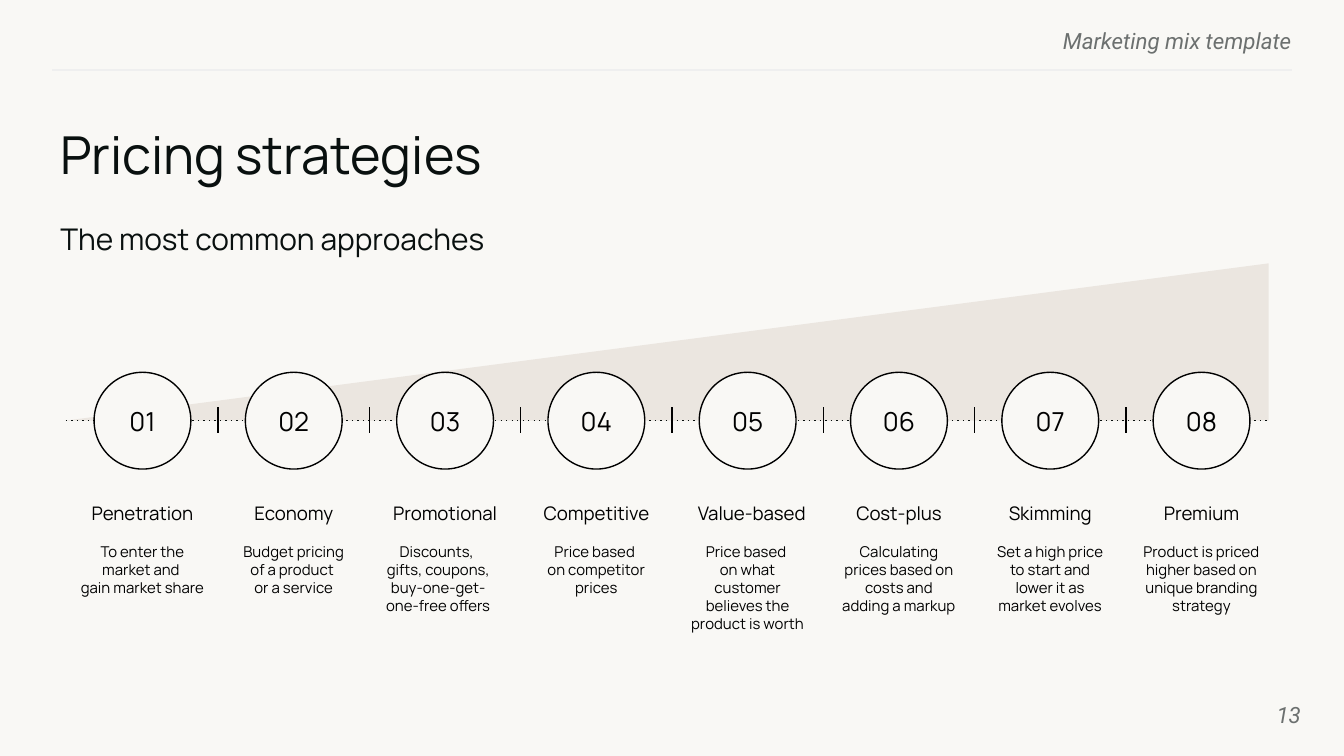
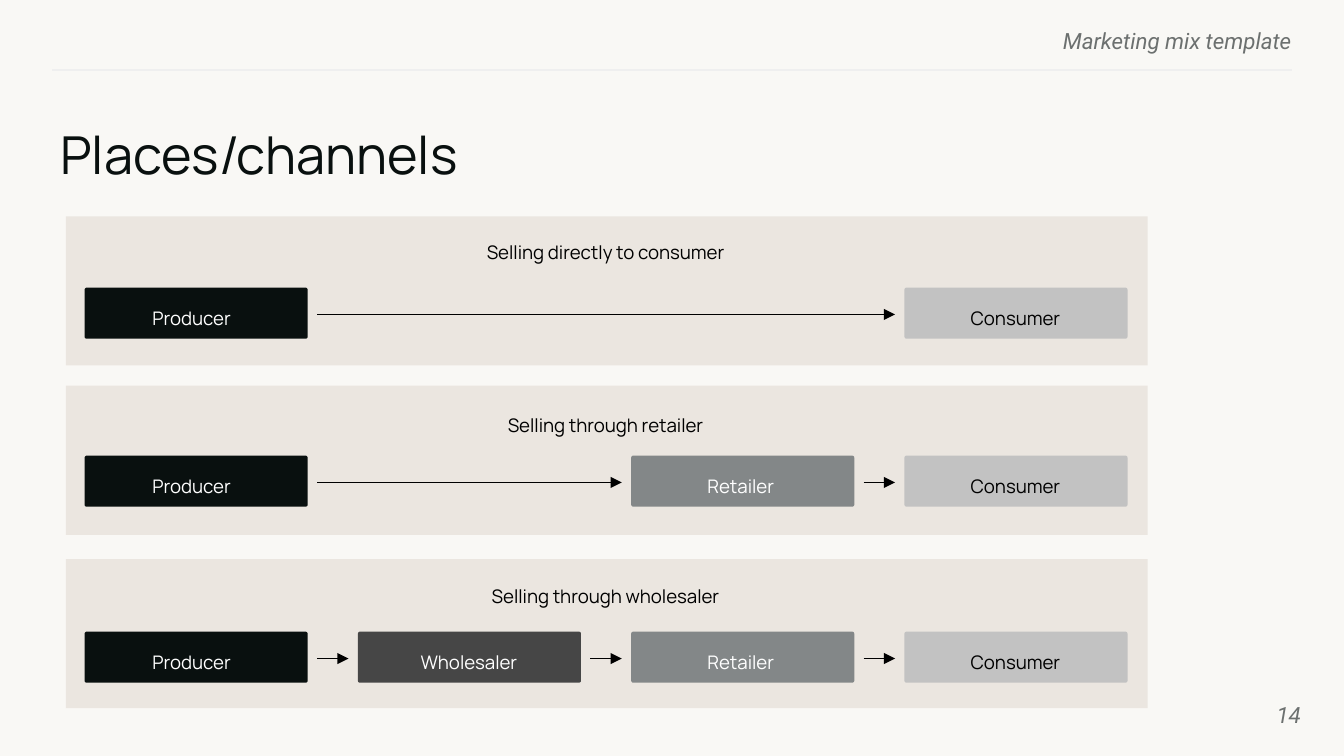
from copy import deepcopy

from lxml import etree
from pptx import Presentation
from pptx.dml.color import RGBColor
from pptx.enum.shapes import MSO_CONNECTOR, MSO_SHAPE
from pptx.enum.text import MSO_ANCHOR, MSO_AUTO_SIZE, PP_ALIGN
from pptx.oxml.ns import qn
from pptx.util import Inches, Pt

# Content
HEADER = "Marketing mix template"
PRICING = {
    "title": "Pricing strategies",
    "subtitle": "The most common approaches",
    "page": "13",
    # name, name width, name shift, description, description width, description shift
    "strategies": [
        ("Penetration", 1.25, 0, "To enter the market and \ngain market share", 1.21, 0),
        ("Economy", 0.99, 0, "Budget pricing of a product \nor a service", 1.12, 0),
        ("Promotional", 1.26, 0,
         "Discounts, \ngifts, coupons, buy-one-get-one-free offers", 1.13, -0.05),
        ("Competitive", 1.25, 0, "Price based \non competitor prices", 1.13, 0),
        ("Value-based", 1.21, 0.03,
         "Price based \non what customer believes the product is worth", 1.13, 0),
        ("Cost-plus", 0.99, 0,
         "Calculating prices based on costs and adding a markup", 1.12, 0),
        ("Skimming", 0.99, 0,
         "Set a high price to start and lower it as market evolves", 1.06, 0),
        ("Premium", 1.34, 0,
         "Product is priced higher based on unique branding strategy", 1.25, 0),
    ],
}
CHANNELS = {
    "title": "Places/channels",
    "page": "14",
    # caption, panel top, caption top, box top, members
    "panels": [
        ("Selling directly to consumer", 1.61, 1.68, 2.14, ["Producer", "Consumer"]),
        ("Selling through retailer", 2.87, 2.97, 3.39,
         ["Producer", "Retailer", "Consumer"]),
        ("Selling through wholesaler", 4.16, 4.24, 4.7,
         ["Producer", "Wholesaler", "Retailer", "Consumer"]),
    ],
}
# member: column, fill, text colour, label inset
MEMBERS = {
    "Producer": (0, "ink", "white", 0.1),
    "Wholesaler": (1, "dark_grey", "white", 0.13),
    "Retailer": (2, "mid_grey", "white", 0.12),
    "Consumer": (3, "light_grey", "black", 0.13),
}

# Shared look
COLORS = {
    "background": "F9F8F5", "ink": "09100F", "black": "000000", "white": "FFFFFF",
    "muted": "6C706F", "rule": "EFEFEF", "sand": "EBE6E0",
    "dark_grey": "464646", "mid_grey": "838788", "light_grey": "C2C2C2",
}
FONTS = {
    "title": {"name": "Manrope", "size": Pt(28)},
    "subtitle": {"name": "Manrope", "size": Pt(16)},
    "number": {"name": "Manrope", "size": Pt(14)},
    "label": {"name": "Manrope", "size": Pt(10)},
    "description": {"name": "Manrope", "size": Pt(8)},
    "page": {"name": "Roboto", "size": Pt(12), "italic": True},
}
NO_MARGINS = (0, 0, 0, 0)
LABEL_MARGINS = (0.13, 0.07, 0.13, 0.07)
CIRCLE_MARGINS = (0.1, 0.1, 0.1, 0.1)
CENTERED = {"alignment": PP_ALIGN.CENTER}
RIGHT = {"alignment": PP_ALIGN.RIGHT}
LABEL = {"alignment": PP_ALIGN.CENTER, "line_spacing": 1.25}


def color(name):
    return RGBColor.from_string(COLORS[name])


def apply(target, values):
    for name, value in values.items():
        setattr(target, name, value)


def write(shape, text, font, ink, margins=NO_MARGINS, paragraph_format=None, **frame_format):
    frame = shape.text_frame
    sides = ("margin_left", "margin_top", "margin_right", "margin_bottom")
    apply(frame, dict(zip(sides, map(Inches, margins))))
    apply(frame, {"word_wrap": True, **frame_format})
    paragraph = frame.paragraphs[0]
    paragraph.text = text
    apply(paragraph, paragraph_format or {})
    for run in paragraph.runs:
        apply(run.font, FONTS[font])
        run.font.color.rgb = color(ink)
    # Line breaks take the size of the text around them
    for line_break in paragraph._p.findall(qn("a:br")):
        line_break.insert(0, deepcopy(paragraph.runs[0]._r.find(qn("a:rPr"))))


def add_text(slide, box, *text_settings, **frame_format):
    textbox = slide.shapes.add_textbox(*map(Inches, box))
    write(textbox, *text_settings, **frame_format)


def add_label(slide, box, text, font="label", ink="black", paragraph_format=LABEL):
    add_text(slide, box, text, font, ink, LABEL_MARGINS, paragraph_format,
             auto_size=MSO_AUTO_SIZE.SHAPE_TO_FIT_TEXT)


def add_figure(slide, kind, box, fill, outline=None):
    shape = slide.shapes.add_shape(kind, *map(Inches, box))
    shape.shadow.inherit = False
    shape.fill.solid()
    shape.fill.fore_color.rgb = color(fill)
    if outline:
        shape.line.color.rgb = color(outline)
        shape.line.width = Pt(0.75)
    else:
        shape.line.fill.background()
    return shape


def add_line(slide, start, end, ink="black", dash=None, arrow=False):
    line = slide.shapes.add_connector(
        MSO_CONNECTOR.STRAIGHT, *map(Inches, (*start, *end)))
    line.line.color.rgb = color(ink)
    line.line.width = Pt(0.75)
    properties = line._element.spPr
    outline = properties.find(qn("a:ln"))
    if dash:
        etree.SubElement(outline, qn("a:prstDash"), val=dash)
    if arrow:
        etree.SubElement(outline, qn("a:tailEnd"), type="triangle")
    etree.SubElement(properties, qn("a:effectLst"))


def add_base_slide(presentation, content):
    slide = presentation.slides.add_slide(presentation.slide_layouts[6])
    slide.background.fill.solid()
    slide.background.fill.fore_color.rgb = color("background")
    add_text(slide, (5.76, 0.2, 3.85, 0.18), HEADER, "page", "muted", NO_MARGINS, RIGHT)
    add_line(slide, (9.61, 0.52), (0.39, 0.52), "rule")
    add_text(slide, (0.45, 0.91, 9.23, 0.51), content["title"], "title", "ink",
             NO_MARGINS, {"space_after": Pt(10)})
    add_text(slide, (9.08, 5.1, 0.6, 0.43), content["page"], "page", "muted",
             NO_MARGINS, RIGHT, vertical_anchor=MSO_ANCHOR.MIDDLE)
    return slide


def build_pricing(presentation):
    slide = add_base_slide(presentation, PRICING)
    add_text(slide, (0.45, 1.6, 5.54, 0.25), PRICING["subtitle"], "subtitle", "ink",
             NO_MARGINS, {"line_spacing": 1.15})

    # Rising wedge and dotted axis
    left, right, axis = 0.49, 9.44, 3.13
    wedge = add_figure(slide, MSO_SHAPE.RIGHT_TRIANGLE,
                       (left, 1.96, right - left, axis - 1.96), "sand")
    wedge._element.spPr.find(qn("a:xfrm")).set("flipH", "1")
    add_line(slide, (left, axis), (right, axis), "ink", dash="dot")

    # Numbered strategies with ticks between them
    strategies = PRICING["strategies"]
    first_center, last_center, diameter = 1.06, 8.94, 0.72
    pitch = (last_center - first_center) / (len(strategies) - 1)
    for index, strategy in enumerate(strategies):
        name, name_width, name_shift, description, width, shift = strategy
        center = first_center + index * pitch
        circle = add_figure(
            slide, MSO_SHAPE.OVAL,
            (center - diameter / 2, axis - diameter / 2, diameter, diameter),
            "background", "black")
        write(circle, f"{index + 1:02}", "number", "black", CIRCLE_MARGINS, CENTERED,
              vertical_anchor=MSO_ANCHOR.MIDDLE)
        add_label(slide, (center + name_shift - name_width / 2, 3.62, name_width, 0.3), name)
        add_label(slide, (center + shift - width / 2, 3.97, width, 0.67), description,
                  "description", paragraph_format=CENTERED)
        if index < len(strategies) - 1:
            tick = center + pitch / 2
            add_line(slide, (tick, 3.03), (tick, 3.22))


def build_channels(presentation):
    slide = add_base_slide(presentation, CHANNELS)
    first_left, last_left, box_width, box_height = 0.63, 6.73, 1.66, 0.38
    pitch = (last_left - first_left) / (len(MEMBERS) - 1)
    arrow_gap = 0.07
    for caption, panel_top, caption_top, box_top, members in CHANNELS["panels"]:
        add_figure(slide, MSO_SHAPE.RECTANGLE, (0.49, panel_top, 8.05, 1.11), "sand")
        add_label(slide, (2.68, caption_top, 3.65, 0.3), caption)

        # Members of the channel, each joined to the one before
        arrow_start = None
        for member in members:
            column, fill, ink, inset = MEMBERS[member]
            box_left = first_left + column * pitch
            box = add_figure(slide, MSO_SHAPE.ROUNDED_RECTANGLE,
                             (box_left, box_top, box_width, box_height), fill)
            box.adjustments[0] = 0.04
            add_label(slide, (box_left + inset, box_top + 0.03, 1.39, 0.3), member, ink=ink)
            if arrow_start:
                arrow_top = box_top + 0.2
                add_line(slide, (arrow_start, arrow_top),
                         (box_left - arrow_gap, arrow_top), arrow=True)
            arrow_start = box_left + box_width + arrow_gap


def main():
    presentation = Presentation()
    # Widescreen, 16 to 9
    presentation.slide_width = Inches(10)
    presentation.slide_height = Inches(10) * 9 // 16
    build_pricing(presentation)
    build_channels(presentation)
    presentation.save("out.pptx")


if __name__ == "__main__":
    main()
